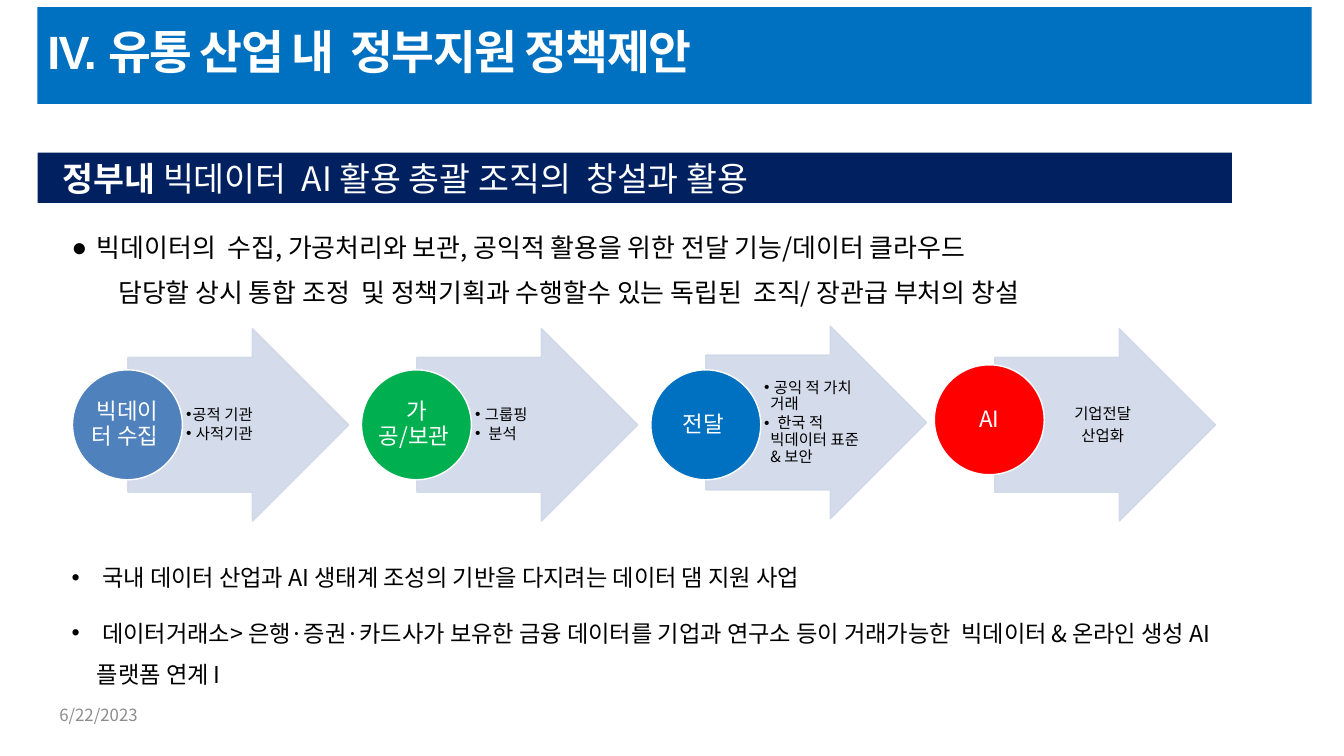
from lxml import etree
from pptx import Presentation
from pptx.dml.color import RGBColor
from pptx.enum.shapes import MSO_SHAPE
from pptx.enum.text import MSO_ANCHOR, PP_ALIGN
from pptx.oxml.ns import qn
from pptx.util import Pt

RECTANGLE, OVAL, ARROW = MSO_SHAPE.RECTANGLE, MSO_SHAPE.OVAL, MSO_SHAPE.RIGHT_ARROW
TOP, MIDDLE = MSO_ANCHOR.TOP, MSO_ANCHOR.MIDDLE
LEFT, CENTER = PP_ALIGN.LEFT, PP_ALIGN.CENTER

WHITE = RGBColor(0xFF, 0xFF, 0xFF)
BLACK = RGBColor(0, 0, 0)
GRAY = RGBColor(0x8C, 0x8C, 0x8C)
NAVY = RGBColor(0x00, 0x20, 0x60)
BLUE = RGBColor(0x00, 0x70, 0xC0)
STEEL = RGBColor(0x4F, 0x81, 0xBD)
GREEN = RGBColor(0x00, 0xB0, 0x50)
RED = RGBColor(0xFF, 0, 0)
PALE = RGBColor(0xD0, 0xD8, 0xE8)
KOREAN_FONT = "Noto Sans CJK KR"
LATIN_FONT = "Arial"

presentation = Presentation()
presentation.slide_width, presentation.slide_height = Pt(960), Pt(540)
slide = presentation.slides.add_slide(presentation.slide_layouts[6])


def add_box(kind, left, top, width, height, fill=None, line=None, insets=(7.2, 0, 7.2, 0), anchor=MIDDLE):
    area = Pt(left), Pt(top), Pt(width), Pt(height)
    if kind is None:
        shape = slide.shapes.add_textbox(*area)
    else:
        shape = slide.shapes.add_shape(kind, *area)
        shape.shadow.inherit = False
        shape.fill.solid()
        shape.fill.fore_color.rgb = fill
        if line is None:
            shape.line.fill.background()
        else:
            shape.line.color.rgb = line
            shape.line.width = Pt(1)
    frame = shape.text_frame
    frame.word_wrap = True
    frame.vertical_anchor = anchor
    frame.margin_left, frame.margin_top, frame.margin_right, frame.margin_bottom = map(Pt, insets)
    return shape


def add_text(shape, runs, size, color, font=KOREAN_FONT, align=LEFT, spacing=1.0,
             before=0, after=0, bullet=None, margin=0, hanging=0):
    frame = shape.text_frame
    paragraph = frame.paragraphs[0] if not frame.text else frame.add_paragraph()
    for words in runs:
        paragraph.add_run().text = words
    paragraph.alignment = align
    paragraph.line_spacing = spacing
    paragraph.space_before, paragraph.space_after = Pt(before), Pt(after)
    paragraph.font.size = Pt(size)
    paragraph.font.color.rgb = color
    paragraph.font.name = font
    properties = paragraph._p.get_or_add_pPr()
    properties.set("marL", str(Pt(margin)))
    properties.set("indent", str(-Pt(hanging)))
    defaults = properties.find(qn("a:defRPr"))
    defaults.set("kern", "0")
    etree.SubElement(defaults, qn("a:ea"), typeface=KOREAN_FONT)
    if bullet:
        defaults.addprevious(etree.Element(qn("a:buFont"), typeface=LATIN_FONT))
        defaults.addprevious(etree.Element(qn("a:buChar"), char=bullet))
    return paragraph


date = add_box(None, 35.3, 501.8, 324, 18)
add_text(date, ["6/22/2023"], 12, GRAY)

subtitle = add_box(RECTANGLE, 26.8, 109, 853.2, 36, NAVY, insets=(18, 0, 7.2, 0))
heading = add_text(subtitle, ["정부내 ", "빅데이터  AI 활용 총괄 조직의  창설과 활용"], 24, WHITE)
heading.runs[0].font.bold = True

proposal = add_box(None, 44.2, 156, 873.4, 66, anchor=TOP)
add_text(proposal, ["빅데이터의  수집, 가공처리와 보관, 공익적 활용을 위한 전달 기능/데이터 클라우드"],
         18.5, BLACK, spacing=1.43, bullet="●", margin=18, hanging=18)
add_text(proposal, ["담당할 상시 통합 조정  및 정책기획과 수행할수 있는 독립된  조직/ 장관급 부처의 창설"],
         18.5, BLACK, spacing=1.43, margin=33.2)

projects = add_box(None, 44.2, 402.6, 873.4, 98, anchor=TOP)
add_text(projects, [" 국내 데이터 산업과 AI 생태계 조성의 기반을 다지려는 데이터 댐 지원 사업"],
         16.6, BLACK, bullet="•", margin=18, hanging=18)
add_text(projects, [" 데이터거래소> 은행·증권·카드사가 보유한 금융 데이터를 기업과 연구소 등이 거래가능한"
                    "  빅데이터 & 온라인 생성 AI 플랫폼 연계 I"],
         16.6, BLACK, spacing=1.5, before=9.5, bullet="•", margin=18, hanging=18)

bulleted = dict(spacing=0.9, after=1.65, bullet="•", margin=4.5, hanging=4.5)
centered = dict(spacing=0.9, after=3.85, align=CENTER)
stages = [
    ("빅데이터 수집 ", STEEL, 51.8, 264.2, 234.7, ["공적 기관", " 사적기관"], bulleted),
    ("가공/보관 ", GREEN, 258.2, 264.2, 234.7, [" 그룹핑", "  분석"], bulleted),
    ("전달 ", BLUE, 464.9, 264.2, 233, [" 공익 적 가치  거래", "  한국 적 빅데이터 표준 & 보안"], bulleted),
    ("AI", RED, 667.4, 260.6, 234.7, ["기업전달 ", "산업화 "], centered),
]
for index, (name, color, circle_left, circle_top, arrow_top, details, style) in enumerate(stages):
    arrow_left = 91.4 + 206.4 * index
    arrow = add_box(ARROW, arrow_left, arrow_top, 157.7, 137.5, PALE, PALE)
    arrow.adjustments[0], arrow.adjustments[1] = 0.7, 0.5
    for tint in arrow._element.spPr.iter(qn("a:srgbClr")):
        etree.SubElement(tint, qn("a:alpha"), val="90000")
    detail_box = add_box(None, arrow_left + 39.4, arrow_top + 20.7, 77, 96.5, insets=(2.2, 0.7, 1.4, 0.7))
    for detail in details:
        add_text(detail_box, [detail], 11, BLACK, **style)
    circle = add_box(OVAL, circle_left, circle_top, 78.5, 78.5, color, WHITE, (0.7, 0.7, 0.7, 0.7))
    add_text(circle, [name], 16, WHITE, align=CENTER, spacing=0.9)

title = add_box(RECTANGLE, 26.8, 5.2, 910.1, 69.1, BLUE, insets=(7.2, 0, 7.2, 7))
title_text = add_text(title, ["IV. 유통 산업 내  정부지원 정책제안"], 33.3, WHITE, font=LATIN_FONT)
title_text.font.bold = True
title_text._p.pPr.find(qn("a:defRPr")).set("spc", "-120")

presentation.save("out.pptx")
